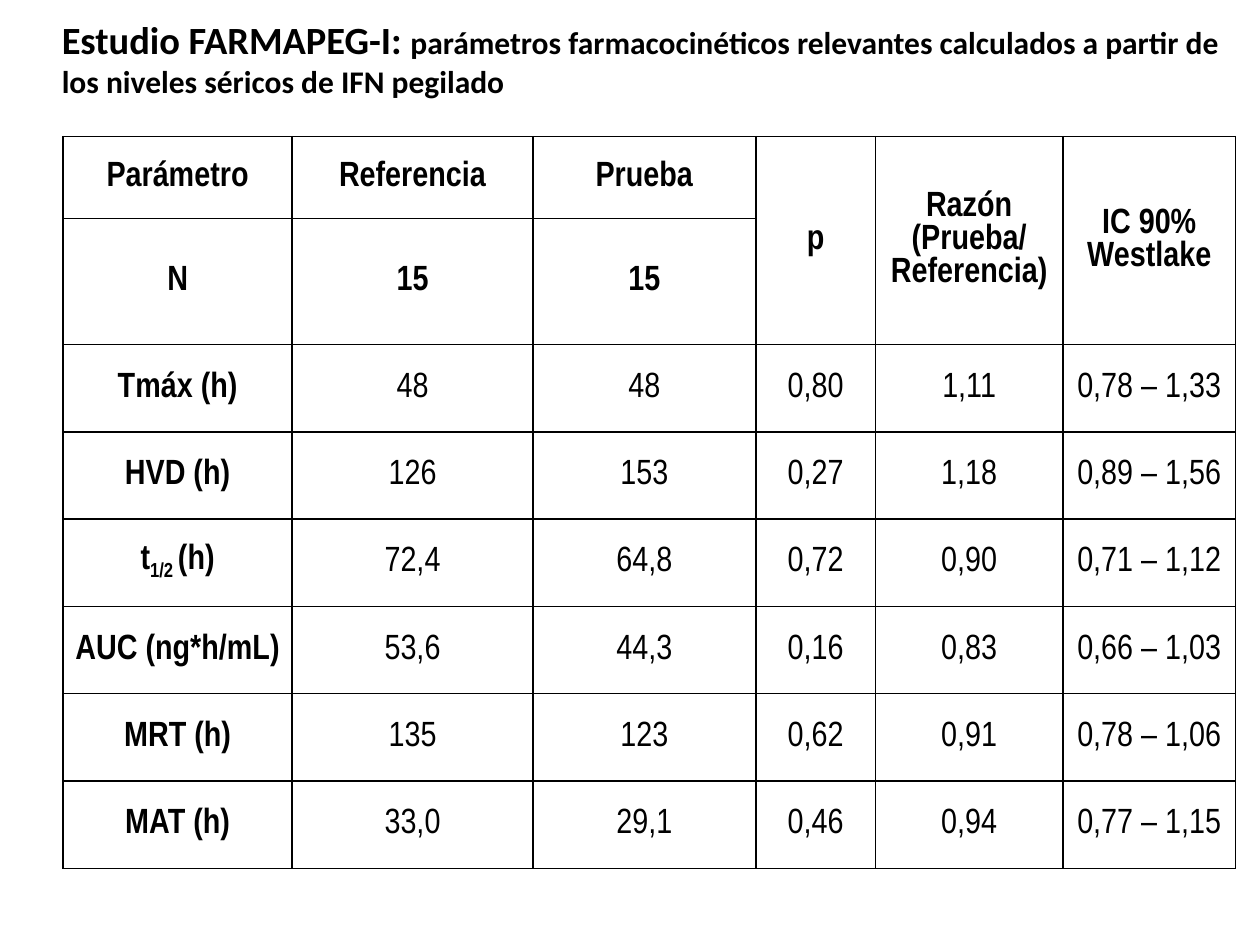
"""Builds the slide with the pharmacokinetic parameters of the FARMAPEG-I study."""
from lxml import etree
from pptx import Presentation
from pptx.dml.color import RGBColor
from pptx.enum.text import MSO_ANCHOR, MSO_AUTO_SIZE, PP_ALIGN
from pptx.oxml.ns import qn
from pptx.util import Pt

MIDDLE = MSO_ANCHOR.MIDDLE
CENTER = PP_ALIGN.CENTER
GROW = MSO_AUTO_SIZE.SHAPE_TO_FIT_TEXT

COLORS = {"text": "000000", "border": "000000", "header": "FFFFFF"}
TITLE_FONT = "Calibri"
TABLE_FONT = "Arial Narrow"
TITLE_PARTS = [
    ("Estudio FARMAPEG-I: ", 22),
    ("parámetros farmacocinéticos relevantes calculados a partir de "
     "los niveles séricos de IFN pegilado", 18),
]
HEADER_ROWS = 2
FIRST_MERGED_COLUMN = 3
COLUMN_WIDTHS = [131, 137.5, 127.5, 68.3, 107.2, 98.6]
ROW_HEIGHTS = [46.8, 72] + [49.9] * 6
ROWS = [
    ["Parámetro", "Referencia", "Prueba", "p",
     "Razón\v(Prueba/\vReferencia)", "IC 90%\vWestlake"],
    ["N", "15", "15", "", "", ""],
    ["Tmáx (h)", "48", "48", "0,80", "1,11", "0,78 – 1,33"],
    ["HVD (h)", "126", "153", "0,27", "1,18", "0,89 – 1,56"],
    [("t", "1/2 ", "(h)"), "72,4", "64,8", "0,72", "0,90", "0,71 – 1,12"],
    ["AUC (ng*h/mL)", "53,6", "44,3", "0,16", "0,83", "0,66 – 1,03"],
    ["MRT (h)", "135", "123", "0,62", "0,91", "0,78 – 1,06"],
    ["MAT (h)", "33,0", "29,1", "0,46", "0,94", "0,77 – 1,15"],
]


def format_run(run, font_name, size, bold):
    """Set the font, size, weight and colour of a run."""
    run.font.name = font_name
    run.font.size = Pt(size)
    run.font.bold = bold
    run.font.color.rgb = RGBColor.from_string(COLORS["text"])


def add_title(slide):
    """Add the two-size title above the table."""
    shape = slide.shapes.add_textbox(Pt(28.2), Pt(5.6), Pt(686), Pt(90.5))
    text_frame = shape.text_frame
    text_frame.word_wrap = True
    text_frame.auto_size = GROW
    paragraph = text_frame.paragraphs[0]
    paragraph.space_after = Pt(6)
    for text, size in TITLE_PARTS:
        run = paragraph.add_run()
        run.text = text
        format_run(run, TITLE_FONT, size, True)


def set_borders(cell):
    """Draw a thin solid line on the four sides of a cell."""
    properties = cell._tc.get_or_add_tcPr()
    for position, side in enumerate(("lnL", "lnR", "lnT", "lnB")):
        line = etree.Element(qn(f"a:{side}"), w=str(Pt(1)))
        fill = etree.SubElement(line, qn("a:solidFill"))
        etree.SubElement(fill, qn("a:srgbClr"), val=COLORS["border"])
        properties.insert(position, line)


def write_cell(cell, content, bold):
    """Write centred text; a tuple holds a base, a subscript and the rest."""
    paragraph = cell.text_frame.paragraphs[0]
    if isinstance(content, tuple):
        for text in content:
            paragraph.add_run().text = text
        paragraph.runs[1].font._element.set("baseline", "-25000")
    else:
        paragraph.text = content
    paragraph.alignment = CENTER
    paragraph.space_before = paragraph.space_after = Pt(3.8)
    for run in paragraph.runs:
        format_run(run, TABLE_FONT, 20, bold)


def style_cell(cell, is_header):
    """Set the margins, anchor, fill and borders of a cell."""
    cell.margin_left = cell.margin_right = Pt(0)
    cell.margin_top = cell.margin_bottom = Pt(0)
    cell.vertical_anchor = MIDDLE
    if is_header:
        cell.fill.solid()
        cell.fill.fore_color.rgb = RGBColor.from_string(COLORS["header"])
    else:
        cell.fill.background()
    set_borders(cell)


def add_parameter_table(slide):
    """Add the table of parameters with its two-row header."""
    table = slide.shapes.add_table(
        len(ROWS), len(COLUMN_WIDTHS), Pt(36), Pt(78),
        Pt(sum(COLUMN_WIDTHS)), Pt(sum(ROW_HEIGHTS))).table
    table.first_row = table.horz_banding = False
    for column, width in zip(table.columns, COLUMN_WIDTHS):
        column.width = Pt(width)
    for row, height in zip(table.rows, ROW_HEIGHTS):
        row.height = Pt(height)
    for row_index, contents in enumerate(ROWS):
        is_header = row_index < HEADER_ROWS
        for column_index, content in enumerate(contents):
            cell = table.cell(row_index, column_index)
            style_cell(cell, is_header)
            write_cell(cell, content, is_header or column_index == 0)
    for column_index in range(FIRST_MERGED_COLUMN, len(COLUMN_WIDTHS)):
        table.cell(0, column_index).merge(table.cell(HEADER_ROWS - 1, column_index))


def main():
    """Build and save the presentation."""
    presentation = Presentation()
    presentation.slide_width = Pt(720)
    presentation.slide_height = Pt(540)
    slide = presentation.slides.add_slide(presentation.slide_layouts[6])
    add_title(slide)
    add_parameter_table(slide)
    presentation.save("out.pptx")


if __name__ == "__main__":
    main()
